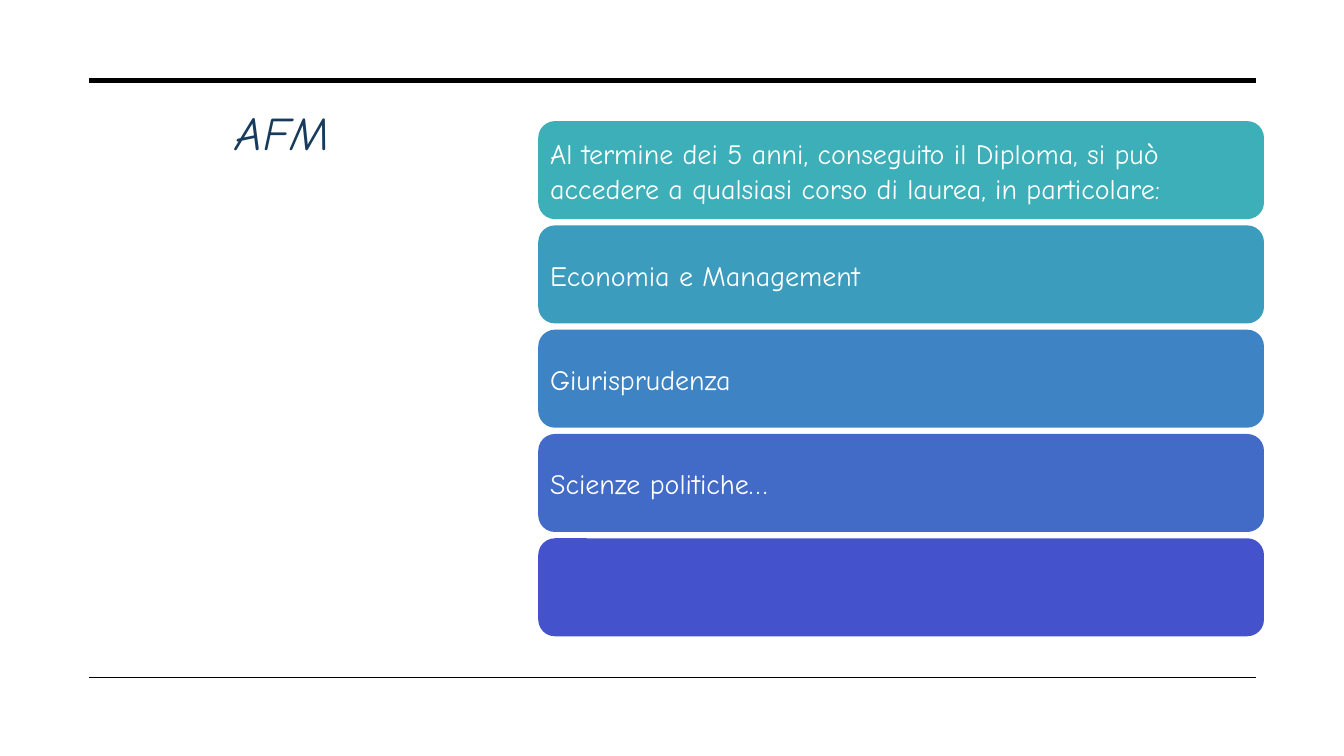
from dataclasses import dataclass

from lxml import etree
from pptx import Presentation
from pptx.dml.color import RGBColor
from pptx.enum.shapes import MSO_CONNECTOR, MSO_SHAPE
from pptx.enum.text import MSO_ANCHOR, PP_ALIGN
from pptx.oxml.ns import qn
from pptx.util import Pt

STRAIGHT = MSO_CONNECTOR.STRAIGHT
ROUNDED = MSO_SHAPE.ROUNDED_RECTANGLE
MIDDLE = MSO_ANCHOR.MIDDLE
LEFT = PP_ALIGN.LEFT


@dataclass(frozen=True)
class Theme:
    """Colours and type sizes of the deck."""

    font: str = "Comic Neue"
    title_size: float = 33.5
    body_size: float = 20
    title_color: str = "183B5D"
    body_color: str = "FFFFFF"
    rule_color: str = "000000"
    bar_colors: tuple = ("3DAFB8", "3C9CBE", "3E84C4", "416BC7", "4452CC")


THEME = Theme()
BAR_TEXTS = (
    "Al termine dei 5 anni, conseguito il Diploma, si può accedere a "
    "qualsiasi corso di laurea, in particolare:",
    "Economia e Management",
    "Giurisprudenza",
    "Scienze politiche…",
    "",
)


def style_paragraph(para, size, color):
    """Set the type of one paragraph."""
    para.alignment = LEFT
    para.font.name = THEME.font
    para.font.size = Pt(size)
    para.font.color.rgb = RGBColor.from_string(color)


def add_rule(page, left, top, width, weight):
    """Draw a horizontal rule."""
    rule = page.shapes.add_connector(
        STRAIGHT, Pt(left), Pt(top), Pt(left + width), Pt(top))
    rule.line.color.rgb = RGBColor.from_string(THEME.rule_color)
    rule.line.width = Pt(weight)
    etree.SubElement(rule._element.spPr, qn("a:effectLst"))


def add_title(page, left, top, width, height, text):
    """Place the italic slide title."""
    box = page.shapes.add_textbox(Pt(left), Pt(top), Pt(width), Pt(height))
    frame = box.text_frame
    frame.word_wrap = True
    frame.margin_left = frame.margin_right = frame.margin_bottom = 0
    frame.margin_top = Pt(1.5)
    para = frame.paragraphs[0]
    para.text = text
    para.space_before = Pt(1.3)
    para.font.italic = True
    style_paragraph(para, THEME.title_size, THEME.title_color)


def add_bars(page, left, top, width, height, gap=4.5):
    """Stack equal rounded bars in the given box."""
    count = len(BAR_TEXTS)
    bar_height = (height - gap * (count - 1)) / count
    for index, (text, color) in enumerate(zip(BAR_TEXTS, THEME.bar_colors)):
        bar_top = top + index * (bar_height + gap)
        bar = page.shapes.add_shape(
            ROUNDED, Pt(left), Pt(bar_top), Pt(width), Pt(bar_height))
        bar.adjustments[0] = 0.17
        bar.shadow.inherit = False
        bar.fill.solid()
        bar.fill.fore_color.rgb = RGBColor.from_string(color)
        bar.line.fill.background()
        if text:
            frame = bar.text_frame
            frame.word_wrap = True
            frame.vertical_anchor = MIDDLE
            frame.margin_left = Pt(5)
            frame.margin_right = Pt(30)
            frame.margin_top = frame.margin_bottom = 0
            para = frame.paragraphs[0]
            para.text = text
            para.line_spacing = 1.03
            style_paragraph(para, THEME.body_size, THEME.body_color)


def main():
    """Build and save the deck."""
    deck = Presentation()
    deck.slide_width, deck.slide_height = Pt(960), Pt(540)
    page = deck.slides.add_slide(deck.slide_layouts[6])
    add_title(page, 168.5, 72.7, 77, 42.5, "AFM")
    add_rule(page, 63.5, 57.5, 833.5, 3.5)
    add_rule(page, 63.5, 484, 833.5, 1)
    add_bars(page, 384.5, 86.5, 518.4, 368)
    deck.save("out.pptx")


if __name__ == "__main__":
    main()
